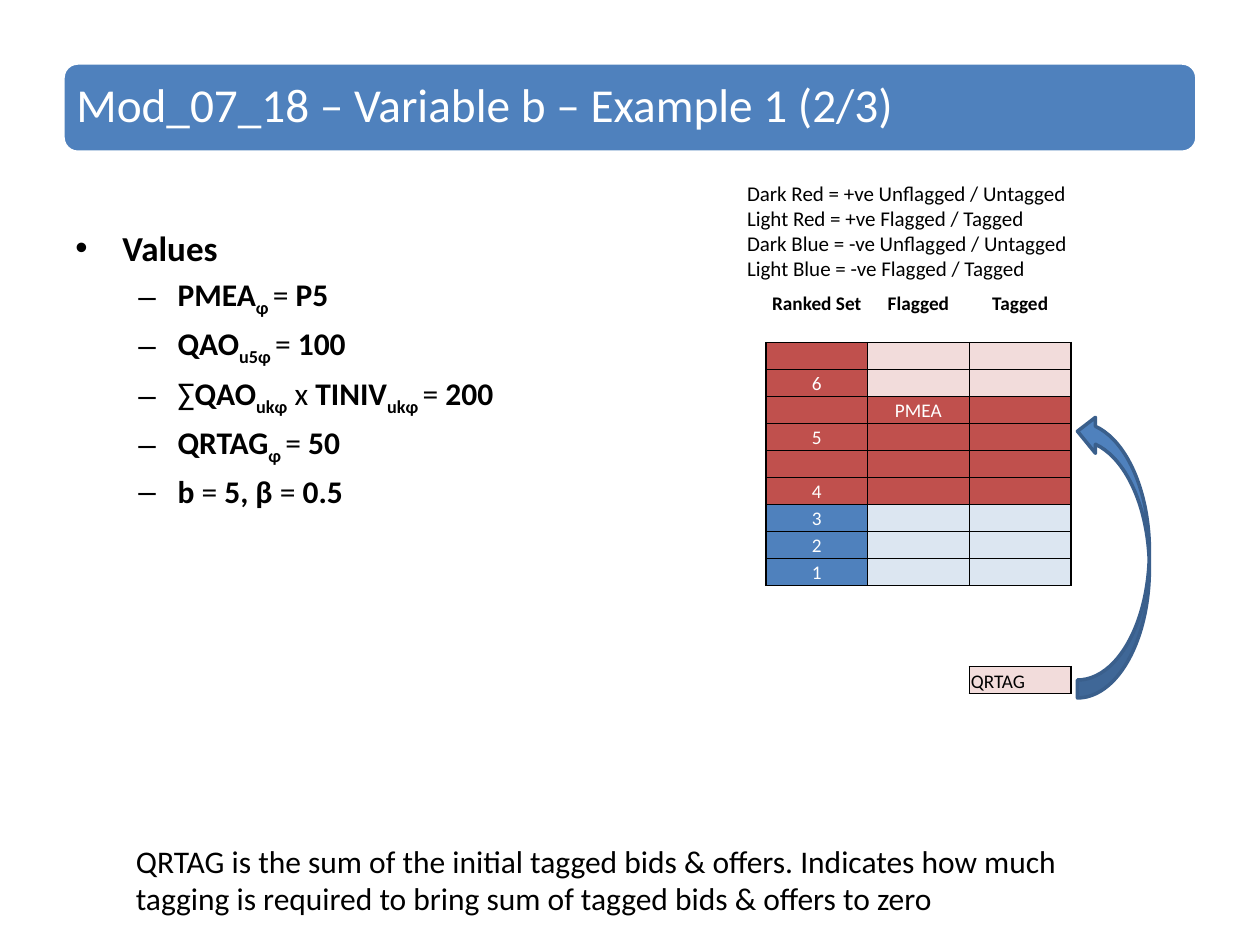
from dataclasses import dataclass

from lxml import etree
from pptx import Presentation, util as u
from pptx.dml.color import RGBColor
from pptx.enum import shapes, text
from pptx.oxml import ns

Cm, Pt = u.Cm, u.Pt


@dataclass(frozen=True)
class Theme:
    font: str = "Calibri"
    black: str = "000000"
    white: str = "FFFFFF"
    blue: str = "4F81BD"
    light_blue: str = "DCE6F1"
    red: str = "C0504D"
    light_red: str = "F2DCDB"
    arrow_line: str = "3A5F8C"
    title: int = 27
    heading: int = 20
    body: int = 18
    legend: int = 12
    cell: int = 11


T = Theme()
PLAIN, BOLD, SUB = {}, {"bold": True}, {"bold": True, "sub": True}
NO_TABLE_STYLE = "{2D5ABB26-0587-4C30-8999-92F81FD0307C}"


def rgb(value):
    return RGBColor.from_string(value)


def write(p, content, size=T.body, color=T.black, bold=False, sub=False):
    r = p.add_run()
    r.text = content
    f = r.font
    f.name, f.size, f.bold = T.font, Pt(size), bold
    f.color.rgb = rgb(color)
    if sub:
        r._r.get_or_add_rPr().set("baseline", "-25000")


def add_xml(parent, tag, **attrs):
    el = etree.SubElement(parent, ns.qn(tag))
    for name, value in attrs.items():
        el.set(name, str(value))
    return el


def set_bullet(p, char, left, hanging):
    pPr = p._p.get_or_add_pPr()
    pPr.set("marL", str(left))
    pPr.set("indent", str(-hanging))
    add_xml(pPr, "a:buFont", typeface="Arial")
    add_xml(pPr, "a:buChar", char=char)


def set_borders(cell, sides):
    """Draw black lines on the sides named by letters, given in the order LRTB."""
    tcPr = cell._tc.get_or_add_tcPr()
    for side in sides:
        ln = add_xml(tcPr, f"a:ln{side}", w=Pt(1))
        add_xml(add_xml(ln, "a:solidFill"), "a:srgbClr", val=T.black)


class Deck:
    def __init__(self):
        self.prs = Presentation()
        self.prs.slide_width, self.prs.slide_height = Cm(25.4), Cm(19.05)
        self.s = self.prs.slides.add_slide(self.prs.slide_layouts[5])

    def shape(self, kind, box, fill, line):
        sp = self.s.shapes.add_shape(kind, *map(Cm, box))
        sp.shadow.inherit = False
        sp.fill.solid()
        sp.fill.fore_color.rgb = rgb(fill)
        sp.line.color.rgb = rgb(line)
        sp.line.width = Pt(2)
        return sp

    def title(self, content, box):
        """Put the title placeholder on a rounded bar."""
        bar = self.shape(shapes.MSO_SHAPE.ROUNDED_RECTANGLE, box, T.blue, T.white)
        sp = self.s.shapes.title
        sp._element.addprevious(bar._element)
        sp.left, sp.top, sp.width, sp.height = map(Cm, box)
        tf = sp.text_frame
        tf.auto_size = text.MSO_AUTO_SIZE.NONE
        tf.vertical_anchor = text.MSO_ANCHOR.MIDDLE
        tf.margin_left = tf.margin_right = tf.margin_top = tf.margin_bottom = Cm(0.27)
        p = tf.paragraphs[0]
        p.alignment = text.PP_ALIGN.LEFT
        p.line_spacing = 0.9
        write(p, content, T.title, T.white)

    def text_box(self, box):
        tf = self.s.shapes.add_textbox(*map(Cm, box)).text_frame
        tf.word_wrap = True
        return tf

    def lines(self, rows, box, size):
        tf = self.text_box(box)
        for i, row in enumerate(rows):
            write(tf.add_paragraph() if i else tf.paragraphs[0], row, size)

    def bullets(self, heading, items, box):
        tf = self.text_box(box)
        p = tf.paragraphs[0]
        p.space_before = Pt(T.heading * 0.2)
        set_bullet(p, "•", Cm(0.95), Cm(0.95))
        write(p, heading, T.heading, bold=True)
        for item in items:
            p = tf.add_paragraph()
            p.level = 1
            p.space_before = Pt(T.body * 0.2)
            set_bullet(p, "–", Cm(2.06), Cm(0.79))
            for content, style in item:
                write(p, content, **style)

    def table(self, n_rows, n_cols, box):
        frame = self.s.shapes.add_table(n_rows, n_cols, *map(Cm, box))
        tbl = frame.table
        tbl.first_row = tbl.horz_banding = False
        tbl._tbl.tblPr.find(ns.qn("a:tableStyleId")).text = NO_TABLE_STYLE
        for row in tbl.rows:
            row.height = Cm(box[3] / n_rows)
        for cell in tbl.iter_cells():
            cell.margin_left = cell.margin_right = cell.margin_top = Cm(0.03)
            cell.margin_bottom = 0
            end = cell.text_frame.paragraphs[0]._p.get_or_add_endParaRPr()
            end.set("sz", str(T.cell * 100))
        return tbl

    def cell(self, cell, content="", fill=None, sides="", color=T.white, bold=False,
             align=text.PP_ALIGN.CENTER, anchor=text.MSO_ANCHOR.MIDDLE):
        set_borders(cell, sides)
        if fill:
            cell.fill.solid()
            cell.fill.fore_color.rgb = rgb(fill)
        if content:
            cell.vertical_anchor = anchor
            p = cell.text_frame.paragraphs[0]
            p.alignment = align
            write(p, content, T.cell, color, bold)

    def ranked_set(self, box):
        tbl = self.table(18, 3, box)
        bottom = text.MSO_ANCHOR.BOTTOM
        for c, name in enumerate(("Ranked Set", "Flagged", "Tagged")):
            self.cell(tbl.cell(0, c), name, color=T.black, bold=True, anchor=bottom)

        # Rank, rows it spans, colour of the rank, colour of flagged and tagged
        bands = [("6", 2, T.red, T.light_red), ("5", 2, T.red, T.red),
                 ("4", 2, T.red, T.red)]
        bands += [(rank, 1, T.blue, T.light_blue) for rank in "321"]
        row = 2
        for rank, span, rank_fill, fill in bands:
            for i in range(span):
                first, last = i == 0, i == span - 1
                sides = "LR" + "T" * first + "B" * last
                labels = (rank if last else "", "PMEA" if rank == "5" and first else "", "")
                for c, label in enumerate(labels):
                    self.cell(tbl.cell(row, c), label, fill if c else rank_fill, sides)
                row += 1

        self.cell(tbl.cell(14, 2), "QRTAG", T.light_red, "LRTB", T.black,
                  align=text.PP_ALIGN.LEFT, anchor=bottom)


def main():
    d = Deck()
    d.bullets("Values", [
        [("PMEA", BOLD), ("φ ", SUB), ("=", PLAIN), (" P5", BOLD)],
        [("QAO", BOLD), ("u5φ ", SUB), ("=", PLAIN), (" 100", BOLD)],
        [("∑", PLAIN), ("QAO", BOLD), ("ukφ", SUB), (" x ", PLAIN),
         ("TINIV", BOLD), ("ukφ ", SUB), ("=", PLAIN), (" 200", BOLD)],
        [("QRTAG", BOLD), ("φ ", SUB), ("=", PLAIN), (" 50", BOLD)],
        [("b ", BOLD), ("=", PLAIN), (" 5, β ", BOLD), ("=", PLAIN), (" 0.5", BOLD)],
    ], (1.27, 4.45, 14.22, 12.57))
    d.ranked_set((15.44, 5.82, 6.15, 9.8))
    d.title("Mod_07_18 – Variable b – Example 1 (2/3)", (1.27, 1.27, 22.86, 1.8))
    d.lines(["QRTAG is the sum of the initial tagged bids & offers. Indicates how much "
             "tagging is required to bring sum of tagged bids & offers to zero"],
            (2.49, 16.84, 19.94, 1.8), T.body)
    d.lines(["Dark Red = +ve Unflagged / Untagged", "Light Red = +ve Flagged / Tagged",
             "Dark Blue = -ve Unflagged / Untagged", "Light Blue = -ve Flagged / Tagged"],
            (14.81, 3.51, 8.15, 2.31), T.legend)
    arrow = d.shape(shapes.MSO_SHAPE.CURVED_RIGHT_ARROW, (21.72, 8.33, 1.45, 5.74),
                    T.blue, T.arrow_line)
    arrow.rotation = 180
    d.prs.save("out.pptx")


if __name__ == "__main__":
    main()
